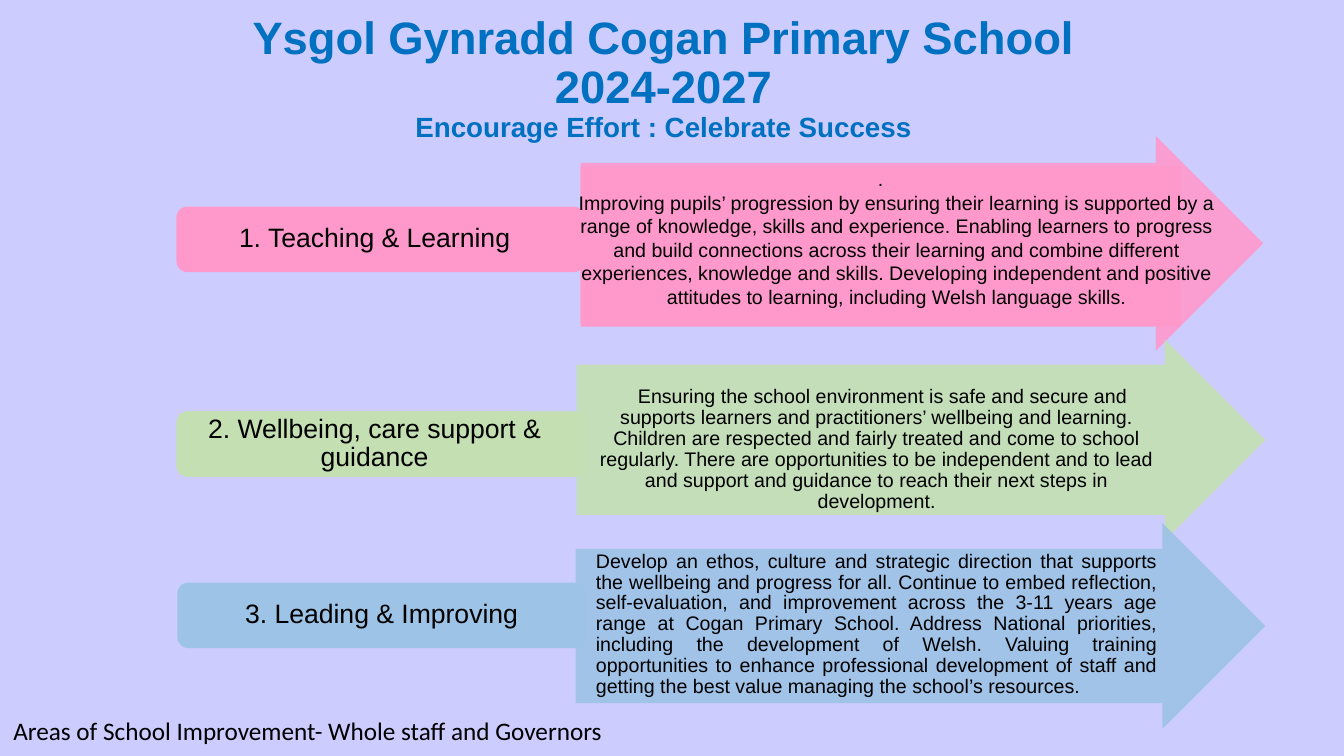
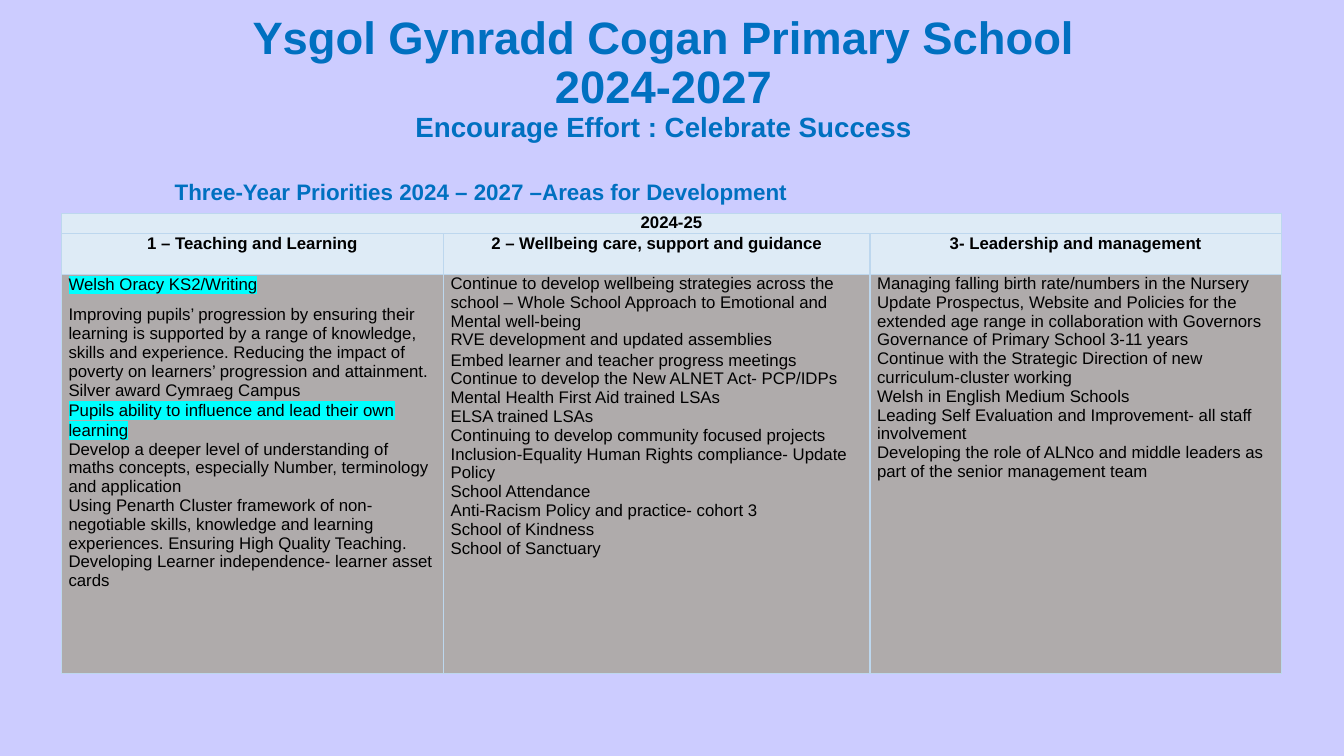
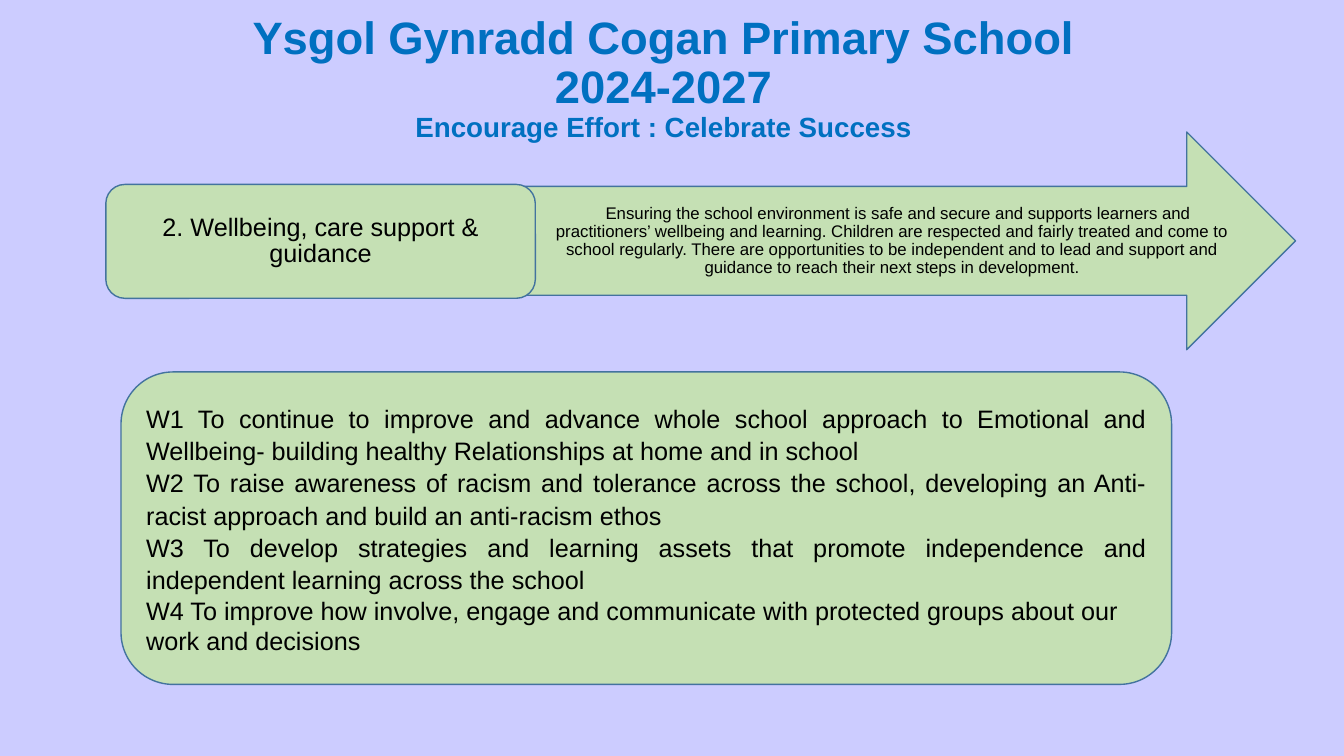
from lxml import etree
from pptx import Presentation
from pptx.dml.color import RGBColor
from pptx.enum.shapes import MSO_SHAPE
from pptx.enum.text import MSO_ANCHOR, PP_ALIGN
from pptx.oxml.ns import qn
from pptx.util import Inches, Pt

LILAC = RGBColor(0xCC, 0xCC, 0xFF)
TITLE_BLUE = RGBColor(0x00, 0x70, 0xC0)
BLACK = RGBColor(0x00, 0x00, 0x00)
PINK = RGBColor(0xFF, 0x99, 0xCC)
GREEN = RGBColor(0xC4, 0xE0, 0xB2)
SOFT_GREEN = RGBColor(0xC5, 0xE0, 0xB4)
SKY = RGBColor(0x9D, 0xC3, 0xE6)
OUTLINE = RGBColor(0x43, 0x73, 0x9E)
HEADER_FILL = RGBColor(0xDE, 0xEB, 0xF6)
BODY_FILL = RGBColor(0xAF, 0xAB, 0xAB)
BORDER = RGBColor(0xBD, 0xD7, 0xEE)
CYAN = RGBColor(0x00, 0xFF, 0xFF)

TIGHT = (0.01, 0.01, 0.01, 0.01)
NORMAL = (0.1, 0.05, 0.1, 0.05)
CENTER = {"alignment": PP_ALIGN.CENTER}
LABEL = {"alignment": PP_ALIGN.CENTER, "line_spacing": 0.89}
JUSTIFIED = {"alignment": PP_ALIGN.JUSTIFY, "line_spacing": 0.89}

WELLBEING_LABEL = "2. Wellbeing, care support & guidance"
WELLBEING_AIM = (
    "Ensuring the school environment is safe and secure and supports learners and "
    "practitioners’ wellbeing and learning. Children are respected and fairly treated "
    "and come to school regularly. There are opportunities to be independent and to lead "
    "and support and guidance to reach their next steps in development.")
TEACHING_AIM = (
    "Improving pupils’ progression by ensuring their learning is supported by a range of "
    "knowledge, skills and experience. Enabling learners to progress and build connections "
    "across their learning and combine different experiences, knowledge and skills. "
    "Developing independent and positive attitudes to learning, including Welsh language skills.")
LEADING_AIM = (
    "Develop an ethos, culture and strategic direction that supports the wellbeing and "
    "progress for all. Continue to embed reflection, self-evaluation, and improvement across "
    "the 3-11 years age range at Cogan Primary School. Address National priorities, including "
    "the development of Welsh. Valuing training opportunities to enhance professional "
    "development of staff and getting the best value managing the school’s resources.")

# Label box, right inset, label, arrow box, colour
AREAS = [
    ((1.75, 2.05, 4.05, 0.65), 0.2, "1. Teaching & Learning", (5.76, 1.35, 6.77, 2.13), PINK),
    ((1.75, 4.08, 4.05, 0.65), 0.2, WELLBEING_LABEL, (5.72, 3.37, 6.83, 1.99), GREEN),
    ((1.76, 5.78, 4.05, 0.65), 0.08, "3. Leading & Improving", (5.71, 5.19, 6.84, 2.04), SKY),
]

HEADINGS = ["1 – Teaching and Learning", "2 – Wellbeing care, support and guidance",
            "3- Leadership and management"]
# Each item: text, paragraph format, highlighted
PRIORITIES = [
    [("Welsh Oracy KS2/Writing", {"line_spacing": 1.07, "space_after": Pt(8)}, True),
     ("Improving pupils’ progression by ensuring their learning is supported by a range of "
      "knowledge, skills and experience. Reducing the impact of poverty on learners’ "
      "progression and attainment.", {}, False),
     ("Silver award Cymraeg Campus", {}, False),
     ("Pupils ability to influence and lead their own learning", {"line_spacing": 1.07}, True),
     ("Develop a deeper level of understanding of maths concepts, especially Number, "
      "terminology and application", {}, False),
     ("Using Penarth Cluster framework of non-negotiable skills, knowledge and learning "
      "experiences. Ensuring High Quality Teaching.", {}, False),
     ("Developing Learner independence- learner asset cards", {}, False)],
    [("Continue to develop wellbeing strategies across the school – Whole School Approach to "
      "Emotional and Mental well-being", {}, False),
     ("RVE development and updated assemblies", {}, False),
     ("Embed learner and teacher progress meetings", {"line_spacing": 1.07}, False),
     ("Continue to develop the New ALNET Act- PCP/IDPs", {}, False),
     ("Mental Health First Aid trained LSAs", {}, False),
     ("ELSA trained LSAs", {}, False),
     ("Continuing to develop community focused projects", {}, False),
     ("Inclusion-Equality Human Rights compliance- Update Policy", {}, False),
     ("School Attendance", {}, False),
     ("Anti-Racism Policy and practice- cohort 3", {}, False),
     ("School of Kindness", {}, False),
     ("School of Sanctuary", {}, False)],
    [("Managing falling birth rate/numbers in the Nursery", {}, False),
     ("Update Prospectus, Website and Policies for the extended age range in collaboration "
      "with Governors", {}, False),
     ("Governance of Primary School 3-11 years", {}, False),
     ("Continue with the Strategic Direction of new curriculum-cluster working", {}, False),
     ("Welsh in English Medium Schools", {}, False),
     ("Leading Self Evaluation and Improvement- all staff involvement", {}, False),
     ("Developing the role of ALNco and middle leaders as part of the senior management team",
      {}, False)],
]

WELLBEING_GOALS = [
    "W1 To continue to improve and advance whole school approach to Emotional and Wellbeing- "
    "building healthy Relationships at home and in school",
    "W2 To raise awareness of racism and tolerance across the school, developing an "
    "Anti-racist approach and build an anti-racism ethos",
    "W3 To develop strategies and learning assets that promote independence and independent "
    "learning across the school",
    "W4 To improve how involve, engage and communicate with protected groups about our work "
    "and decisions",
]


def add_run(p, text, size, color=BLACK, bold=False, name="Arial"):
    r = p.add_run()
    r.text = text
    for key, value in {"size": Pt(size), "bold": bold, "name": name}.items():
        setattr(r.font, key, value)
    r.font.color.rgb = color
    return r


def add_paragraph(tf, text, size, para=None, indent=None, **font):
    """Fill the first paragraph if it is empty, else add one; indent is (margin, first line)."""
    p = tf.add_paragraph() if tf.paragraphs[0].runs else tf.paragraphs[0]
    for key, value in (para or {}).items():
        setattr(p, key, value)
    if indent:
        pPr = p._p.get_or_add_pPr()
        for key, value in zip(("marL", "indent"), indent):
            pPr.set(key, str(Inches(value)))
    return add_run(p, text, size, **font)


def set_frame(tf, anchor=MSO_ANCHOR.TOP, insets=NORMAL):
    tf.word_wrap = True
    tf.vertical_anchor = anchor
    for side, value in zip(("left", "top", "right", "bottom"), insets):
        setattr(tf, f"margin_{side}", Inches(value))
    return tf


def add_text_box(s, box, **frame):
    return set_frame(s.shapes.add_textbox(*map(Inches, box)).text_frame, **frame)


def add_block(s, kind, box, fill, line=None, adjust=(), alpha=None, **frame):
    """Add a filled preset shape and return its text frame."""
    sp = s.shapes.add_shape(kind, *map(Inches, box))
    sp.shadow.inherit = False
    sp.fill.solid()
    sp.fill.fore_color.rgb = fill
    if alpha:
        color = sp._element.spPr.find(qn("a:solidFill")).find(qn("a:srgbClr"))
        etree.SubElement(color, qn("a:alpha")).set("val", str(alpha * 1000))
    if line:
        sp.line.color.rgb = line
        sp.line.width = Pt(1)
    else:
        sp.line.fill.background()
    for i, value in enumerate(adjust):
        sp.adjustments[i] = value
    return set_frame(sp.text_frame, **frame)


def highlight(r, color):
    mark = etree.Element(qn("a:highlight"))
    etree.SubElement(mark, qn("a:srgbClr")).set("val", str(color))
    r._r.rPr.find(qn("a:solidFill")).addnext(mark)


def style_cell(cell, fill):
    for side, value in zip(("left", "top", "right", "bottom"), (0.07, 0, 0.07, 0)):
        setattr(cell, f"margin_{side}", Inches(value))
    cell.fill.solid()
    cell.fill.fore_color.rgb = fill
    tcPr = cell._tc.get_or_add_tcPr()
    for i, edge in enumerate(("lnL", "lnR", "lnT", "lnB")):
        ln = etree.Element(qn(f"a:{edge}"), w=str(Pt(1)))
        solid = etree.SubElement(ln, qn("a:solidFill"))
        etree.SubElement(solid, qn("a:srgbClr")).set("val", str(BORDER))
        tcPr.insert(i, ln)


def add_titled_slide(prs):
    s = prs.slides.add_slide(prs.slide_layouts[6])
    tf = add_text_box(s, (1.34, 0.43, 10.48, 1.04), anchor=MSO_ANCHOR.BOTTOM)
    p = tf.paragraphs[0]
    p.alignment = PP_ALIGN.CENTER
    p.line_spacing = 0.9
    for text in ("Ysgol Gynradd Cogan Primary School", "2024-2027"):
        add_run(p, text, 32.4, TITLE_BLUE, True)
        p.add_line_break()
    add_run(p, "Encourage Effort : Celebrate Success", 19.8, TITLE_BLUE, True)
    return s


def build_areas(prs):
    s = add_titled_slide(prs)
    tf = add_text_box(s, (0, 7.05, 6.07, 0.4))
    add_paragraph(tf, "Areas of School Improvement- Whole staff and Governors", 18,
                  {"alignment": PP_ALIGN.RIGHT}, name="Calibri")
    for label_box, right, label, arrow_box, color in AREAS:
        add_block(s, MSO_SHAPE.RIGHT_ARROW, arrow_box, color, adjust=(0.75, 0.5), alpha=90)
        tf = add_block(s, MSO_SHAPE.ROUNDED_RECTANGLE, label_box, color, adjust=(0.167,),
                       anchor=MSO_ANCHOR.MIDDLE, insets=(0.08, 0.04, right, 0.04))
        add_paragraph(tf, label, 19, LABEL)

    tf = add_block(s, MSO_SHAPE.RECTANGLE, (5.76, 1.65, 5.95, 1.59), PINK, insets=TIGHT)
    add_paragraph(tf, ".", 14, CENTER)
    aims = [
        (TEACHING_AIM, (5.56, 1.84, 6.67, 1.28), NORMAL, CENTER, None),
        (WELLBEING_AIM, (5.71, 3.83, 5.78, 1.61), TIGHT, LABEL, (0.19, 0.12)),
        (LEADING_AIM, (5.71, 5.46, 5.78, 1.59), TIGHT, JUSTIFIED, (0.19, 0)),
    ]
    for text, box, insets, para, indent in aims:
        add_paragraph(add_text_box(s, box, insets=insets), text, 14, para, indent)


def build_priorities(prs):
    s = add_titled_slide(prs)
    tf = add_text_box(s, (0.35, 1.7, 8.84, 0.39))
    add_paragraph(tf, "Three-Year Priorities 2024 – 2027 –Areas for Development", 16,
                  {"alignment": PP_ALIGN.CENTER, "line_spacing": 1.07},
                  color=TITLE_BLUE, bold=True)

    box = map(Inches, (0.61, 2.12, 12.1, 4.56))
    table = s.shapes.add_table(3, 3, *box).table
    table.first_row = table.horz_banding = False
    for column, width in zip(table.columns, (3.79, 4.23, 4.08)):
        column.width = Inches(width)
    for row, height, fill in zip(table.rows, (0.2, 0.4, 3.96),
                                 (HEADER_FILL, HEADER_FILL, BODY_FILL)):
        row.height = Inches(height)
        for cell in row.cells:
            style_cell(cell, fill)
    table.cell(0, 0).merge(table.cell(0, 2))
    add_paragraph(table.cell(0, 0).text_frame, "2024-25", 12, CENTER, bold=True)
    for col, (heading, items) in enumerate(zip(HEADINGS, PRIORITIES)):
        add_paragraph(table.cell(1, col).text_frame, heading, 12, CENTER, bold=True)
        for text, para, marked in items:
            r = add_paragraph(table.cell(2, col).text_frame, text, 12, para)
            if marked:
                highlight(r, CYAN)


def build_wellbeing(prs):
    s = add_titled_slide(prs)
    look = {"fill": SOFT_GREEN, "line": OUTLINE, "anchor": MSO_ANCHOR.MIDDLE}
    tf = add_block(s, MSO_SHAPE.RIGHT_ARROW, (5.2, 1.31, 7.65, 2.16), **look)
    add_paragraph(tf, WELLBEING_AIM, 12, LABEL, (0.19, 0.12))
    tf = add_block(s, MSO_SHAPE.ROUNDED_RECTANGLE, (1.05, 1.83, 4.26, 1.13), **look)
    add_paragraph(tf, WELLBEING_LABEL, 18, LABEL)
    tf = add_block(s, MSO_SHAPE.ROUNDED_RECTANGLE, (1.2, 3.69, 10.42, 3.1), **look)
    for goal in WELLBEING_GOALS[:-1]:
        add_paragraph(tf, goal, 18, {"alignment": PP_ALIGN.JUSTIFY, "line_spacing": 1.07})
    add_paragraph(tf, WELLBEING_GOALS[-1], 18, {"alignment": PP_ALIGN.LEFT})


def main():
    prs = Presentation()
    prs.slide_width, prs.slide_height = Inches(13.33), Inches(7.5)
    background = prs.slide_master.background.fill
    background.solid()
    background.fore_color.rgb = LILAC
    build_areas(prs)
    build_priorities(prs)
    build_wellbeing(prs)
    prs.save("out.pptx")


if __name__ == "__main__":
    main()
